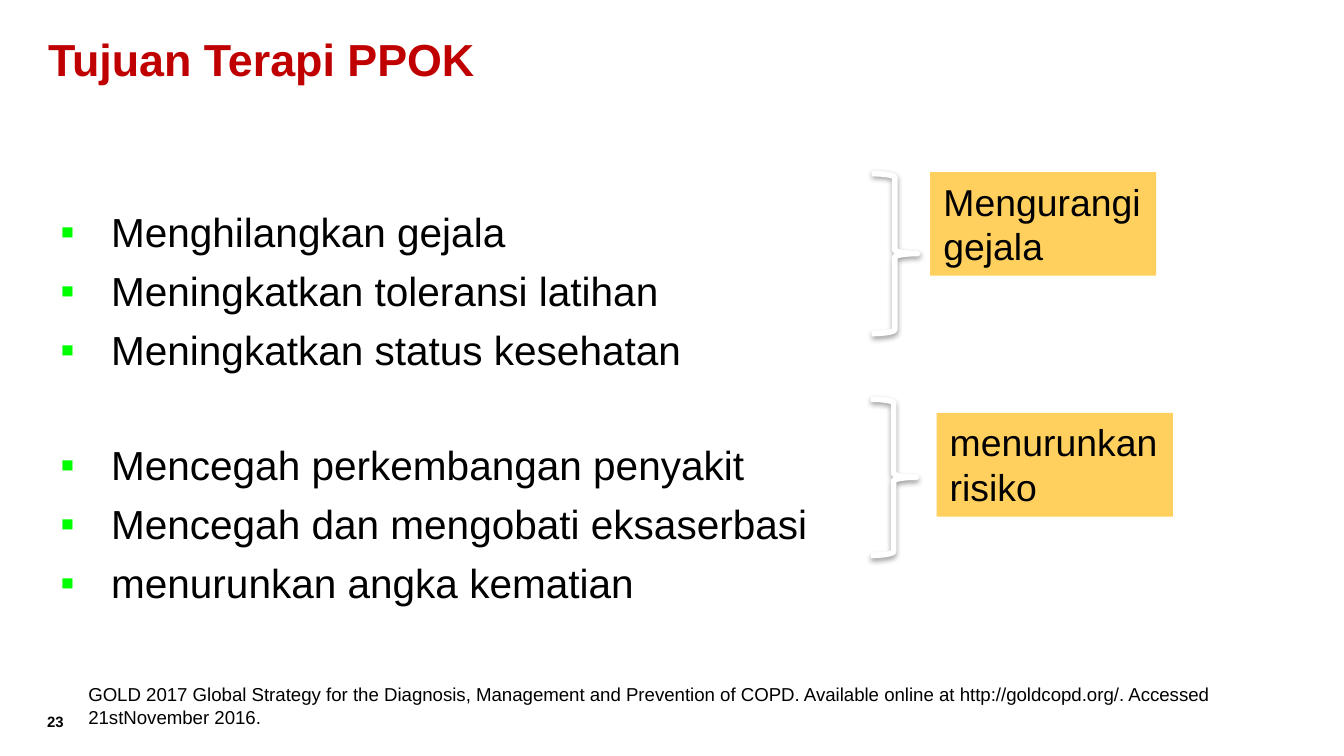
from lxml import etree
from pptx import Presentation
from pptx import util as u
from pptx.dml import color
from pptx.enum import shapes, text
from pptx.oxml import ns

BLACK, RED, GREEN, AMBER, WHITE = "000000", "C00000", "00FF00", "FFD05D", "FFFFFF"
GOALS = [
    ["Menghilangkan gejala", "Meningkatkan toleransi latihan",
     "Meningkatkan status kesehatan"],
    ["Mencegah perkembangan penyakit", "Mencegah dan mengobati eksaserbasi",
     "menurunkan angka kematian"],
]
# Bounds in cm: left, top, width, height
BRACES = [(16.48, 3.28, 0.86, 3.02), (16.46, 7.54, 0.86, 2.95)]
LABELS = [
    (["Mengurangi", "gejala"], (17.58, 3.25, 4.27, 1.96)),
    (["menurunkan", "risiko"], (17.7, 7.8, 4.47, 1.96)),
]
SOURCE = ("GOLD 2017 Global Strategy for the Diagnosis, Management and Prevention "
          "of COPD. Available online at http://goldcopd.org/. Accessed "
          "21stNovember 2016.")


def rgb(value):
    return color.RGBColor.from_string(value)


def cm(bounds):
    return [u.Cm(v) for v in bounds]


def apply(obj, values):
    for name, value in values.items():
        setattr(obj, name, value)


def add_child(parent, tag, **attrs):
    return etree.SubElement(parent, ns.qn(tag), attrs)


def write(p, words, size, hue=BLACK, bold=False):
    p.alignment = text.PP_ALIGN.LEFT
    r = p.add_run()
    r.text = words
    apply(r.font, {"name": "Arial", "size": u.Pt(size), "bold": bold})
    r.font.color.rgb = rgb(hue)


def add_text(s, bounds, words, size, frame=None, **style):
    tf = s.shapes.add_textbox(*cm(bounds)).text_frame
    apply(tf, {"word_wrap": True, **(frame or {})})
    write(tf.paragraphs[0], words, size, **style)


def add_bullet(p):
    pPr = p._p.get_or_add_pPr()
    apply_indent = {"marL": str(u.Cm(0.96)), "indent": str(u.Cm(-0.96))}
    for name, value in apply_indent.items():
        pPr.set(name, value)
    add_child(add_child(pPr, "a:buClr"), "a:srgbClr", val=GREEN)
    add_child(pPr, "a:buFont", typeface="Arial")
    add_child(pPr, "a:buChar", char="▪")


def add_goals(s, bounds, groups, size=21.7, gap=5.4):
    """Bulleted groups, set one empty line apart."""
    tf = s.shapes.add_textbox(*cm(bounds)).text_frame
    tf.word_wrap = True
    for g, goals in enumerate(groups):
        for i, goal in enumerate(goals):
            first = g == i == 0
            p = tf.paragraphs[0] if first else tf.add_paragraph()
            if not first:
                p.space_before = u.Pt(gap if i else 2 * gap + size * 1.15)
            add_bullet(p)
            write(p, goal, size)


def add_brace(s, bounds):
    sp = s.shapes.add_shape(shapes.MSO_SHAPE.RIGHT_BRACE, *cm(bounds))
    sp.fill.background()
    sp.line.color.rgb = rgb(WHITE)
    sp.line.width = u.Pt(3)
    sp.shadow.inherit = False
    effects = sp._element.spPr.find(ns.qn("a:effectLst"))
    shadow = add_child(effects, "a:outerShdw", blurRad=str(u.Pt(3.1)),
                       dist=str(u.Pt(1.6)), dir="5400000", rotWithShape="0")
    add_child(add_child(shadow, "a:srgbClr", val=BLACK), "a:alpha", val="38000")


def add_label(s, lines, bounds):
    sp = s.shapes.add_shape(shapes.MSO_SHAPE.RECTANGLE, *cm(bounds))
    sp.shadow.inherit = False
    sp.fill.solid()
    sp.fill.fore_color.rgb = rgb(AMBER)
    sp.line.fill.background()
    tf = sp.text_frame
    apply(tf, {"word_wrap": False, "vertical_anchor": text.MSO_ANCHOR.TOP})
    for i, line in enumerate(lines):
        write(tf.add_paragraph() if i else tf.paragraphs[0], line, 20)


def main():
    prs = Presentation()
    apply(prs, {"slide_width": u.Cm(25.4), "slide_height": u.Cm(14.28)})
    s = prs.slides.add_slide(prs.slide_layouts[6])
    add_text(s, (0.66, 0.41, 23, 1.4), "Tujuan Terapi PPOK", 24, hue=RED, bold=True,
             frame={"vertical_anchor": text.MSO_ANCHOR.MIDDLE})
    margins = ("margin_left", "margin_top", "margin_right", "margin_bottom")
    add_text(s, (0.89, 13.46, 1.09, 0.46), "23", 8, bold=True,
             frame=dict.fromkeys(margins, 0))
    add_goals(s, (0.89, 3.79, 21.1, 7.6), GOALS)
    for bounds in BRACES:
        add_brace(s, bounds)
    for lines, bounds in LABELS:
        add_label(s, lines, bounds)
    add_text(s, (1.42, 12.78, 22.76, 1.14), SOURCE, 10)
    prs.save("out.pptx")


if __name__ == "__main__":
    main()
